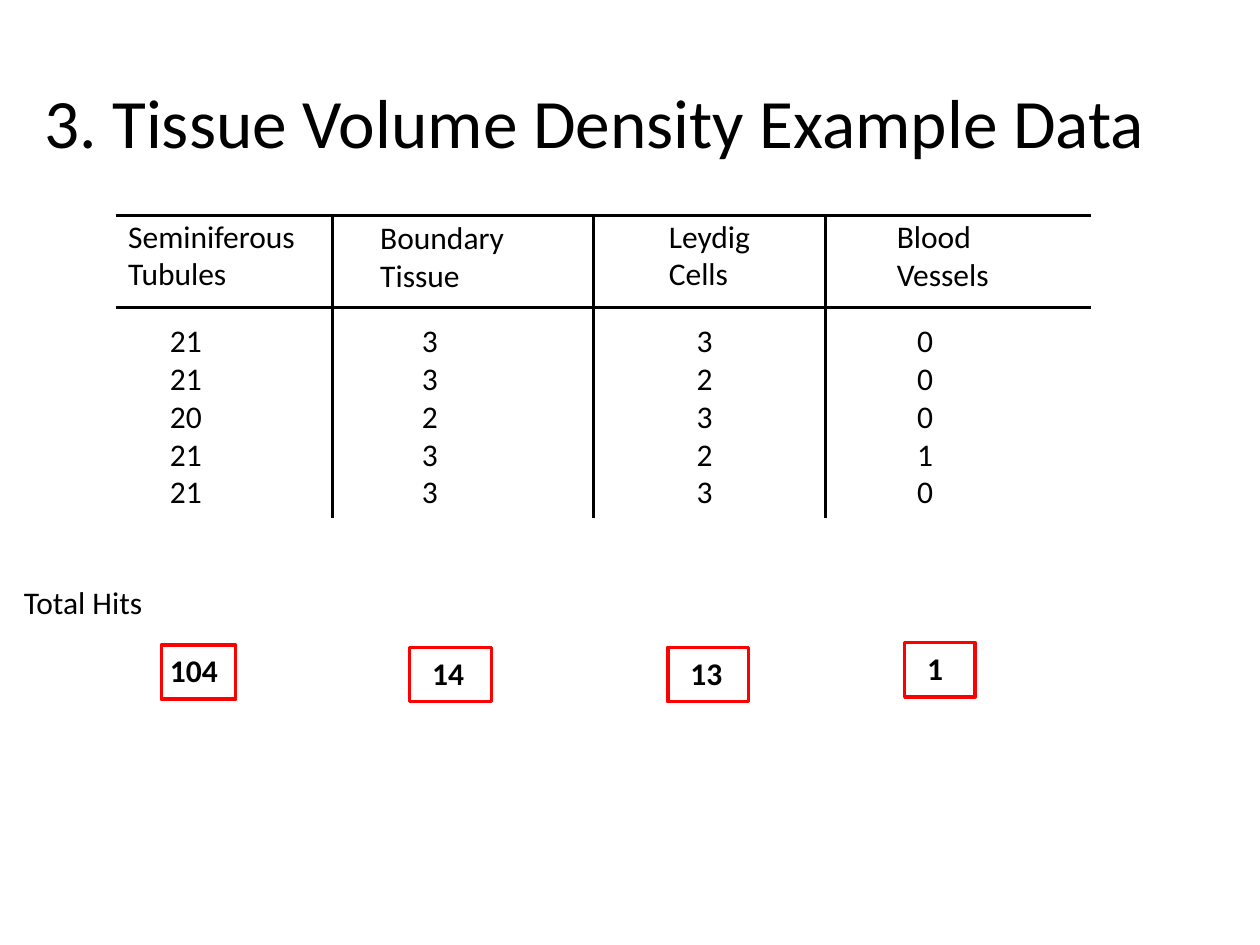
from dataclasses import dataclass

from lxml import etree
from pptx import Presentation
from pptx.dml.color import RGBColor
from pptx.enum import shapes, text
from pptx.oxml import ns
from pptx.util import Pt


@dataclass(frozen=True)
class Theme:
    font: str = "Calibri"
    ink: RGBColor = RGBColor(0, 0, 0)
    accent: RGBColor = RGBColor(255, 0, 0)
    title_size: float = 39.6
    body_size: float = 18
    rule_width: float = 1.75
    frame_width: float = 2


@dataclass(frozen=True)
class Box:
    left: float
    top: float
    width: float
    height: float

    def lengths(self) -> tuple:
        return Pt(self.left), Pt(self.top), Pt(self.width), Pt(self.height)


@dataclass(frozen=True)
class Tissue:
    heading: str
    heading_box: Box
    hits: tuple[int, ...]
    hits_left: float
    total_left: float
    frame: Box


THEME = Theme()
HITS_TOP, HITS_WIDTH, HITS_HEIGHT = 180, 95, 117
TOTAL_WIDTH, LABEL_HEIGHT = 51, 29
TABLE_LEFT, TABLE_RIGHT = 66.2, 623.5
TABLE_TOP, HEADING_BOTTOM, TABLE_BOTTOM = 123.1, 175.7, 296
DIVIDERS = (190.1, 339.1, 471.6)

TISSUES = (
    Tissue("Seminiferous Tubules", Box(66.2, 120.2, 113, 51),
           (21, 21, 20, 21, 21), 90, 90, Box(92.2, 368.6, 42.5, 31)),
    Tissue("Boundary Tissue", Box(210.2, 121, 95, 51),
           (3, 3, 2, 3, 3), 234, 239.8, Box(234, 370, 46.8, 31)),
    Tissue("Leydig Cells", Box(375.1, 120.2, 73.4, 51),
           (3, 2, 3, 2, 3), 391, 387.4, Box(381.6, 370, 46.1, 31)),
    Tissue("Blood Vessels", Box(505.4, 120.6, 106.6, 51),
           (0, 0, 0, 1, 0), 517, 522.7, Box(517, 367.2, 40.3, 31)),
)


def add_run(paragraph, wording: str, size: float, bold: bool = False) -> None:
    run = paragraph.add_run()
    run.text = wording
    run.font.name = THEME.font
    run.font.size = Pt(size)
    run.font.bold = bold
    run.font.color.rgb = THEME.ink


def add_label(parent, box: Box, lines: list[str], bold: bool = False) -> None:
    frame = parent.add_textbox(*box.lengths()).text_frame
    frame.word_wrap = True
    frame.auto_size = text.MSO_AUTO_SIZE.SHAPE_TO_FIT_TEXT
    for index, line in enumerate(lines):
        paragraph = frame.add_paragraph() if index else frame.paragraphs[0]
        add_run(paragraph, line, THEME.body_size, bold)


def add_rule(parent, x1: float, y1: float, x2: float, y2: float) -> None:
    rule = parent.add_connector(
        shapes.MSO_CONNECTOR.STRAIGHT, Pt(x1), Pt(y1), Pt(x2), Pt(y2))
    rule.line.color.rgb = THEME.ink
    rule.line.width = Pt(THEME.rule_width)
    etree.SubElement(rule._element.spPr, ns.qn("a:effectLst"))


def add_title(slide, wording: str) -> None:
    title = slide.shapes.title
    title.left, title.top, title.width, title.height = Box(18, 18, 678, 102).lengths()
    frame = title.text_frame
    frame.auto_size = text.MSO_AUTO_SIZE.NONE
    frame.vertical_anchor = text.MSO_ANCHOR.MIDDLE
    frame.paragraphs[0].alignment = text.PP_ALIGN.LEFT
    add_run(frame.paragraphs[0], wording, THEME.title_size)


def add_hits(slide) -> None:
    grid = slide.shapes.add_group_shape().shapes
    for y in (TABLE_TOP, HEADING_BOTTOM):
        add_rule(grid, TABLE_LEFT, y, TABLE_RIGHT, y)
    for x in DIVIDERS:
        add_rule(grid, x, TABLE_TOP, x, TABLE_BOTTOM)
    for tissue in TISSUES:
        add_label(grid, tissue.heading_box, [tissue.heading])
        add_label(grid, Box(tissue.hits_left, HITS_TOP, HITS_WIDTH, HITS_HEIGHT),
                  [str(hit) for hit in tissue.hits])


def add_total(slide, tissue: Tissue) -> None:
    total = slide.shapes.add_group_shape().shapes
    add_label(total, Box(tissue.total_left, tissue.frame.top, TOTAL_WIDTH, LABEL_HEIGHT),
              [str(sum(tissue.hits))], bold=True)
    outline = total.add_shape(shapes.MSO_SHAPE.RECTANGLE, *tissue.frame.lengths())
    outline.shadow.inherit = False
    outline.fill.background()
    outline.line.color.rgb = THEME.accent
    outline.line.width = Pt(THEME.frame_width)


def main() -> None:
    deck = Presentation()
    deck.slide_width, deck.slide_height = Pt(720), Pt(540)
    slide = deck.slides.add_slide(deck.slide_layouts.get_by_name("Title Only"))
    add_title(slide, "3. Tissue Volume Density Example Data")
    add_label(slide.shapes, Box(6.5, 329.8, 96, LABEL_HEIGHT), ["Total Hits"])
    add_hits(slide)
    for tissue in TISSUES:
        add_total(slide, tissue)
    deck.save("out.pptx")


if __name__ == "__main__":
    main()
